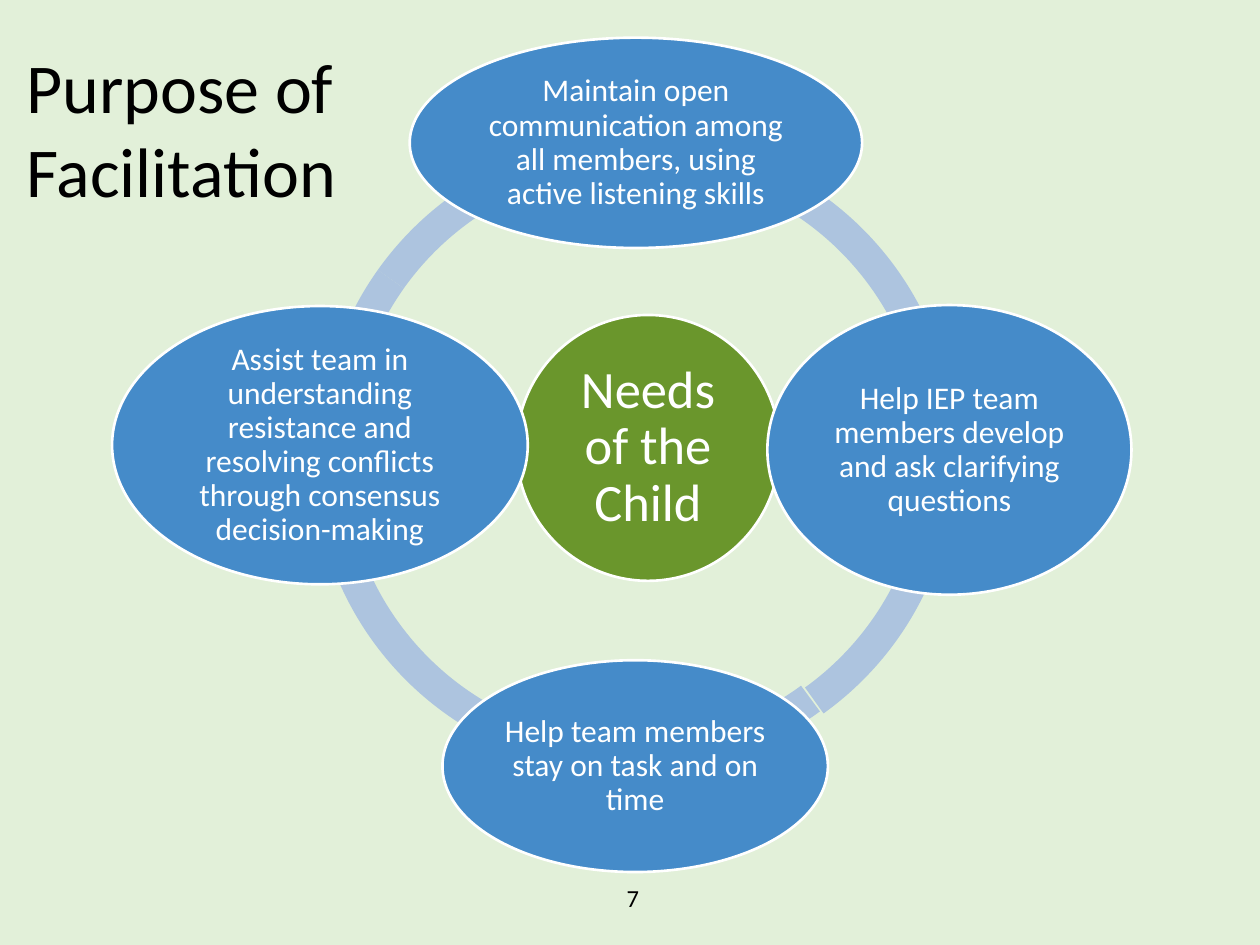
from pptx import Presentation
from pptx.dml.color import RGBColor
from pptx.enum.shapes import MSO_SHAPE
from pptx.enum.text import MSO_ANCHOR, MSO_AUTO_SIZE, PP_ALIGN
from pptx.util import Cm, Pt

ARC, OVAL = MSO_SHAPE.BLOCK_ARC, MSO_SHAPE.OVAL
TOP, MIDDLE = MSO_ANCHOR.TOP, MSO_ANCHOR.MIDDLE
LEFT, CENTER = PP_ALIGN.LEFT, PP_ALIGN.CENTER
FIXED = MSO_AUTO_SIZE.NONE

PALE = RGBColor(0xE2, 0xF0, 0xD9)
RING = RGBColor(0xAD, 0xC4, 0xDF)
GREEN = RGBColor(0x6A, 0x96, 0x2C)
BLUE = RGBColor(0x45, 0x8B, 0xC9)
WHITE = RGBColor(0xFF, 0xFF, 0xFF)
BLACK = RGBColor(0, 0, 0)

# Content: boxes are left, top, width, height in cm
TITLE = ["Purpose of", "Facilitation"]
NUMBER = "7"
# Ring parts: left edge in cm, start and end angle in degrees
ARCS = [
    (6.3, 109.09, 162.31),
    (6.3, 53.69, 109.09),
    (6.43, 215.4, 54.3),
    (6.43, 161.7, 215.41),
]
ARC_TOP, ARC_SIZE, ARC_BAND = 2.74, 12.85, 0.05
# Ovals: text, box, fill, font size, inset in cm
OVALS = [
    ("Needs of the Child", (10.41, 6.35, 5.31, 5.36), GREEN, 30, 0.1),
    ("Maintain open communication among all members, using active "
     "listening skills", (8.26, 0.76, 9.12, 4.24), BLUE, 18, 0.05),
    ("Help IEP team members develop and ask clarifying questions",
     (15.47, 6.15, 7.34, 5.84), BLUE, 18, 0.05),
    ("Help team members stay on task and on time",
     (8.92, 13.31, 7.77, 4.27), BLUE, 18, 0.05),
    ("Assist team in understanding resistance and resolving conflicts "
     "through consensus decision-making",
     (2.26, 6.17, 8.38, 5.61), BLUE, 18, 0.05),
]


def place(box):
    return [Cm(v) for v in box]


def write(shape, lines, size, color, align=CENTER, anchor=MIDDLE,
          gap=1.0, wrap=True):
    frame = shape.text_frame
    frame.text = "\n".join(lines)
    frame.auto_size = FIXED
    frame.word_wrap = wrap
    frame.vertical_anchor = anchor
    for para in frame.paragraphs:
        para.alignment = align
        para.line_spacing = gap
        para.space_before = Pt(0)
        para.font.name = "Calibri"
        para.font.size = Pt(size)
        para.font.color.rgb = color
    return frame


def draw(slide, kind, box, fill):
    shape = slide.shapes.add_shape(kind, *place(box))
    shape.shadow.inherit = False
    shape.fill.solid()
    shape.fill.fore_color.rgb = fill
    return shape


def main():
    deck = Presentation()
    deck.slide_width, deck.slide_height = Cm(25.4), Cm(19.05)
    slide = deck.slides.add_slide(deck.slide_layouts[5])
    slide.background.fill.solid()
    slide.background.fill.fore_color.rgb = PALE

    # Title
    title = slide.shapes.title
    title.left, title.top, title.width, title.height = place(
        (0.28, 0.76, 7.09, 3.68))
    write(title, TITLE, 40, BLACK, LEFT, TOP, wrap=False)

    # Slide number
    foot = slide.shapes.add_textbox(*place((9.8, 17.58, 5.92, 1.02)))
    write(foot, [NUMBER], 14, BLACK)

    # Ring: angles are stored as 0.6 per degree
    for left, start, end in ARCS:
        arc = draw(slide, ARC, (left, ARC_TOP, ARC_SIZE, ARC_SIZE), RING)
        arc.line.fill.background()
        for i, value in enumerate((start * 0.6, end * 0.6, ARC_BAND)):
            arc.adjustments[i] = value

    # Centre and four purposes
    for text, box, fill, size, inset in OVALS:
        oval = draw(slide, OVAL, box, fill)
        oval.line.color.rgb = WHITE
        oval.line.width = Pt(1.5)
        frame = write(oval, [text], size, WHITE, gap=0.9)
        frame.margin_left = frame.margin_right = Cm(inset)
        frame.margin_top = frame.margin_bottom = Cm(inset)

    deck.save("out.pptx")


if __name__ == "__main__":
    main()
